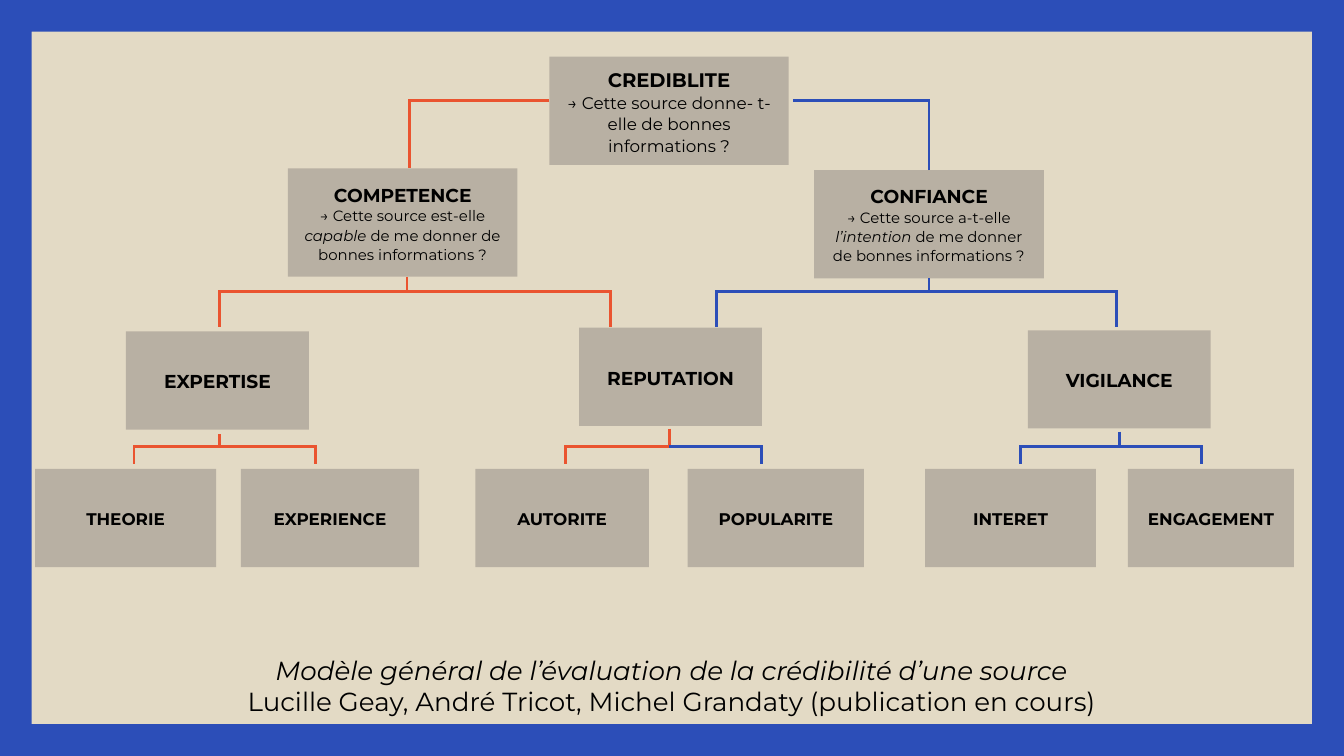
import pptx
import pptx.dml.color
import pptx.enum.shapes
import pptx.enum.text
import pptx.oxml
import pptx.util
from pptx.oxml import ns

Pt = pptx.util.Pt
BLUE, ORANGE, SAND, TAUPE, BLACK = "2C4EB8", "EA5430", "E3DAC5", "B8B0A3", "000000"


def paint(fill, colour):
    fill.solid()
    fill.fore_color.rgb = pptx.dml.color.RGBColor.from_string(colour)


def add_text(paragraph, text, size, bold=False, italic=False):
    paragraph.alignment = pptx.enum.text.PP_ALIGN.CENTER
    run = paragraph.add_run()
    run.text = text
    run.font.name = "Montserrat"
    run.font.size = Pt(size)
    run.font.bold = bold
    run.font.italic = italic
    paint(run.font.fill, BLACK)


presentation = pptx.Presentation()
presentation.slide_width, presentation.slide_height = Pt(720), Pt(405)
slide = presentation.slides.add_slide(presentation.slide_layouts[6])
paint(slide.background.fill, SAND)

# Frame: the slide's outline with an inner opening
builder = slide.shapes.build_freeform(17.3, 17, scale=Pt(1))
builder.add_line_segments([(17.3, 388), (702.7, 388), (702.7, 17)])
builder.move_to(720, 0)
builder.add_line_segments([(720, 405), (0, 405), (0, 0)])
frame = builder.convert_to_shape()
frame.shadow.inherit = False
paint(frame.fill, BLUE)
frame.line.fill.background()

# Boxes: title, title size, left, top, width, height, question size, question pieces
# (every second piece of a question is italic)
boxes = [
    ("CREDIBLITE", 10.5, 294.3, 30.4, 128.3, 58, 9,
     ["→ Cette source donne- t-elle de bonnes informations ?"]),
    ("COMPETENCE", 10, 154.2, 90.2, 123, 58, 8,
     ["→ Cette source est-elle ", "capable", " de me donner de bonnes informations ?"]),
    ("CONFIANCE", 10, 436.2, 91.2, 123, 58, 8,
     ["→ Cette source a-t-elle ", "l’intention", " de me donner de bonnes informations ?"]),
]
for title, left, top in [("EXPERTISE", 67.5, 177.6), ("REPUTATION", 310.2, 175.6),
                         ("VIGILANCE", 550.6, 177)]:
    boxes.append((title, 10, left, top, 98, 52.6, 0, []))
for title, left, width in [("THEORIE", 18.8, 97), ("EXPERIENCE", 129, 95.5),
                           ("AUTORITE", 254.6, 93), ("POPULARITE", 368.4, 94.5),
                           ("INTERET", 495.6, 91.5), ("ENGAGEMENT", 604.2, 89)]:
    boxes.append((title, 9, left, 251.2, width, 52.6, 0, []))

box_shapes = {}
for title, title_size, left, top, width, height, question_size, pieces in boxes:
    shape = slide.shapes.add_shape(pptx.enum.shapes.MSO_SHAPE.RECTANGLE,
                                   Pt(left), Pt(top), Pt(width), Pt(height))
    shape.shadow.inherit = False
    paint(shape.fill, TAUPE)
    shape.line.fill.background()
    frame_text = shape.text_frame
    frame_text.word_wrap = True
    frame_text.vertical_anchor = pptx.enum.text.MSO_ANCHOR.MIDDLE
    add_text(frame_text.paragraphs[0], title, title_size, bold=True)
    if pieces:
        question = frame_text.add_paragraph()
        for index, piece in enumerate(pieces):
            add_text(question, piece, question_size, italic=index % 2 == 1)
    for paragraph in frame_text.paragraphs:
        paragraph.line_spacing = 1.07
    box_shapes[title] = shape

# Lines: colour, start, end, box joined at the start, its connection site
lines = [
    (ORANGE, (294.3, 54), (218.8, 54), None, None),
    (ORANGE, (219.5, 54), (219.5, 90), None, None),
    (BLUE, (424.8, 54), (498.4, 54), None, None),
    (BLUE, (497.7, 91.2), (497.7, 54), "CONFIANCE", 0),
]
# Brackets: stem x, top, bar y, bottom, (left x, colour), (right x, colour), joined box
brackets = [
    (218, 148.2, 156.3, 175, (117.5, ORANGE), (327, ORANGE), None),
    (497.7, 149.2, 156.3, 175, (384, BLUE), (598.3, BLUE), "CONFIANCE"),
    (117.5, 232.6, 239.2, 248.4, (71.8, ORANGE), (169.2, ORANGE), None),
    (358.6, 229.7, 239.2, 248.4, (303, ORANGE), (408, BLUE), None),
    (599.8, 231.2, 239.2, 248.4, (546.5, BLUE), (643.8, BLUE), None),
]
for stem, top, bar, bottom, left_side, right_side, joined in brackets:
    lines.append((left_side[1], (stem, top), (stem, bar), joined, 2))
    for x, colour in (left_side, right_side):
        lines.append((colour, (stem, bar), (x, bar), None, None))
        lines.append((colour, (x, bar - 0.75), (x, bottom), None, None))

for colour, start, end, joined, site in lines:
    connector = slide.shapes.add_connector(
        pptx.enum.shapes.MSO_CONNECTOR.STRAIGHT,
        Pt(start[0]), Pt(start[1]), Pt(end[0]), Pt(end[1]))
    paint(connector.line.fill, colour)
    connector.line.width = Pt(1.5)
    connector._element.spPr.append(pptx.oxml.parse_xml(f"<a:effectLst {ns.nsdecls('a')}/>"))
    if joined:
        connector.begin_connect(box_shapes[joined], site)

# Caption
caption = slide.shapes.add_textbox(Pt(31.7), Pt(347), Pt(656.6), Pt(41)).text_frame
caption.word_wrap = True
caption.margin_top = caption.margin_bottom = Pt(3.6)
add_text(caption.paragraphs[0],
         "Modèle général de l’évaluation de la crédibilité d’une source", 14, italic=True)
add_text(caption.add_paragraph(),
         "Lucille Geay, André Tricot, Michel Grandaty (publication en cours)", 14)

presentation.save("out.pptx")
